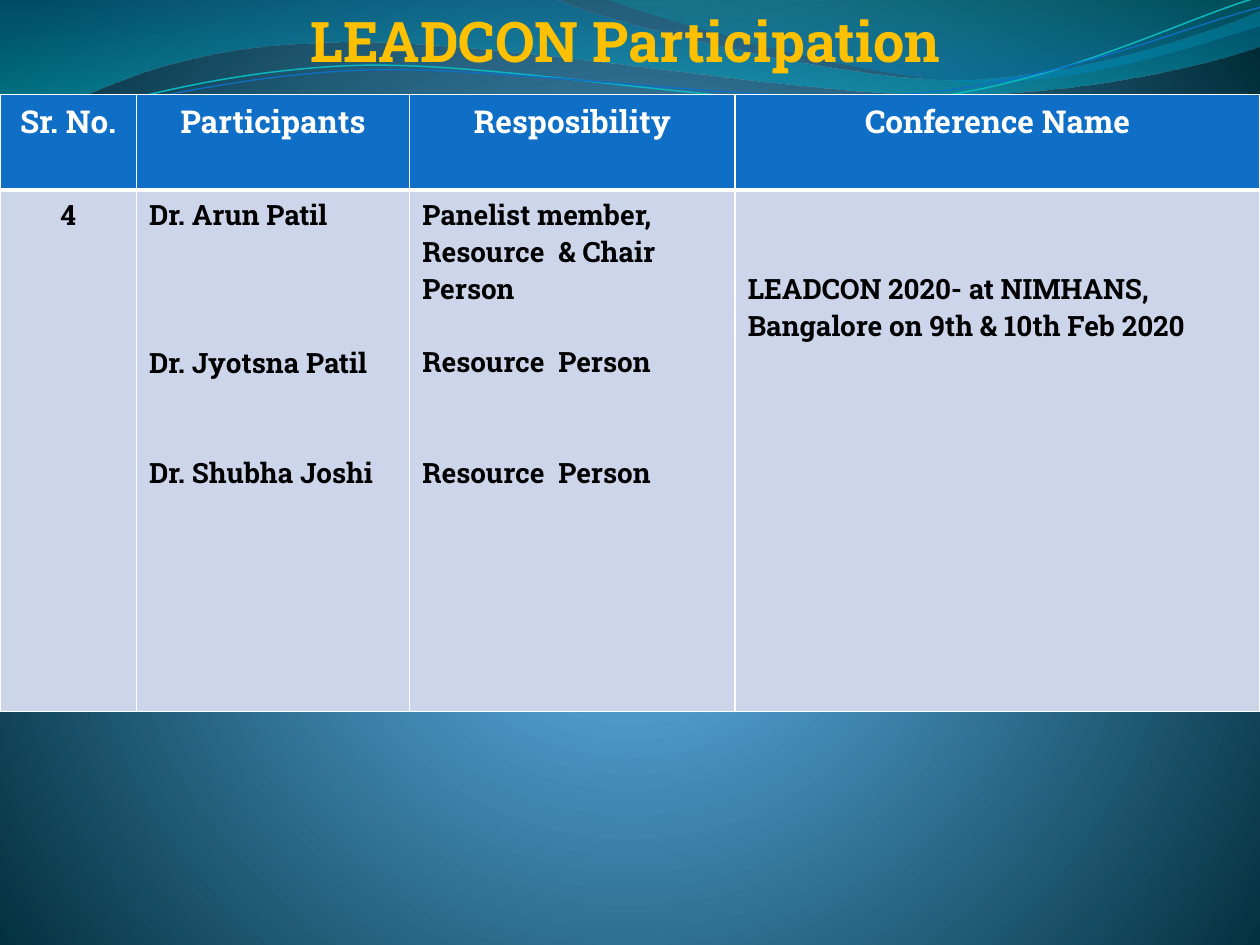
from pptx import Presentation
from pptx.dml.color import RGBColor
from pptx.enum.text import PP_ALIGN as Align
from pptx.oxml import parse_xml
from pptx.oxml.ns import nsdecls, qn
from pptx.util import Cm, Pt

FONT = "Roboto Slab"
COLORS = {
    "glow": "4AA0D6", "sky": "4C98C7", "deep": "002C38",
    "ocean": "0074A1", "aqua": "00C6CF", "teal": "00A1A9", "azure": "008BBF",
    "aqua_line": "0AB8BF", "blue": "0F6FC6", "gold": "FFC000",
    "body": "CCD5EA", "white": "FFFFFF", "black": "000000",
}
WIDTH, HEIGHT = 25.4, 19.05
BLANK_LINE = 21.1  # points, one line of 16 pt text

# Waves in cm: a start point, then curves (three points) and lines (one point)
UPPER_BAND = [(0, 0), [(11.18, -0.03)],
              [(12.09, 0.43), (16.87, 1.6), (19.25, 1.6)],
              [(21.67, 1.6), (24.33, 0.66), (25.4, 0.23)], [(25.43, 0.91)],
              [(24.97, 1.12), (22.1, 1.93), (18.95, 1.91)],
              [(15.8, 1.91), (9.7, 0.71), (6.53, 0.86)],
              [(3.28, 0.91), (1.17, 2.11), (-0.03, 2.87)], [(0, 0)]]
RIGHT_BAND = [(12.17, -0.03),
              [(12.93, 0.28), (17.32, 1.57), (19.53, 1.65)],
              [(21.74, 1.75), (24.41, 0.81), (25.4, 0.53)],
              [(25.4, 0)], [(12.17, -0.03)]]
AQUA_WAVE = [(-0.05, 2.22),
             [(1.19, 1.82), (4.02, 1.04), (7.05, 1.06)],
             [(10.05, 1.07), (15.02, 2.37), (18.08, 2.29)],
             [(21.13, 2.2), (23.86, 0.91), (25.4, 0.55)]]
BLUE_WAVE = [(-0.04, 2.04),
             [(1.16, 1.9), (4.17, 1.15), (7.2, 1.16)],
             [(10.25, 1.18), (15.13, 2.25), (18.19, 2.16)],
             [(21.21, 2.1), (23.93, 1.06), (25.45, 0.75)]]
WAVE_TILT = -2.7

# Each column: width in cm, heading, and entries with the blank lines above them
COLUMNS = [
    (2.75, "Sr. No.", [("4", 0)]),
    (5.51, "Participants",
     [("Dr. Arun Patil", 0), ("Dr. Jyotsna Patil", 3), ("Dr. Shubha Joshi", 2)]),
    (6.56, "Resposibility",
     [("Panelist member,", 0), ("Resource  & Chair Person", 0),
      ("Resource  Person", 1), ("Resource  Person", 2)]),
    (10.58, "Conference Name",
     [("LEADCON 2020- at NIMHANS, Bangalore on 9th & 10th Feb 2020", 2)]),
]


def rgb(name):
    return RGBColor.from_string(COLORS[name])


def set_gradient(fill, owner, stops, direction):
    """Give a fill its stops (percent, colour, opacity) and direction."""
    fill.gradient()
    old = next(owner.iter(qn("a:gradFill")))
    stop_xml = "".join(
        f'<a:gs pos="{pos * 1000}"><a:srgbClr val="{COLORS[name]}">'
        f'<a:alpha val="{alpha * 1000}"/></a:srgbClr></a:gs>'
        for pos, name, alpha in stops)
    old.getparent().replace(old, parse_xml(
        f'<a:gradFill {nsdecls("a")} rotWithShape="1">'
        f"<a:gsLst>{stop_xml}</a:gsLst>{direction}</a:gradFill>"))


def add_wave(slide, left, top, outline, closed):
    """Draw an outline, turning each run of three points into a Bézier curve."""
    def place(point):
        return Cm(left + point[0]), Cm(top + point[1])

    start, *segments = outline
    builder = slide.shapes.build_freeform(*place(start))
    builder.add_line_segments(
        [place(point) for segment in segments for point in segment], close=closed)
    wave = builder.convert_to_shape()
    wave.shadow.inherit = False
    steps = iter(list(wave.element.iter(qn("a:lnTo"))))
    for segment in segments:
        lines = [next(steps) for _ in segment]
        if len(lines) == 3:
            curve = parse_xml(f'<a:cubicBezTo {nsdecls("a")}/>')
            lines[0].addprevious(curve)
            for line in lines:
                curve.append(line[0])
                line.getparent().remove(line)
    return wave


def add_backdrop(slide, left, top):
    set_gradient(slide.background.fill, slide.element,
                 [(0, "glow", 100), (25, "sky", 100), (100, "deep", 100)],
                 '<a:path path="circle"><a:fillToRect l="10000" t="110000" '
                 'r="10000" b="100000"/></a:path>')
    # Translucent bands
    for outline, stops in [
            (UPPER_BAND, [(0, "ocean", 45), (100, "aqua", 55)]),
            (RIGHT_BAND, [(0, "teal", 30), (80, "azure", 45)])]:
        band = add_wave(slide, left, top, outline, True)
        set_gradient(band.fill, band.element, stops,
                     '<a:lin ang="5400000" scaled="1"/>')
        band.line.fill.background()
    # Thin wave lines
    for outline, color, weight in [(AQUA_WAVE, "aqua_line", 0.85),
                                   (BLUE_WAVE, "blue", 0.75)]:
        wave = add_wave(slide, left, top, outline, False)
        wave.rotation = WAVE_TILT
        wave.fill.background()
        wave.line.color.rgb = rgb(color)
        wave.line.width = Pt(weight)


def add_run(paragraph, text, size, color):
    run = paragraph.add_run()
    run.text = text
    run.font.name, run.font.size, run.font.bold = FONT, Pt(size), True
    run.font.color.rgb = rgb(color)


def add_title(slide, left, top, width, height):
    frame = slide.shapes.add_textbox(
        Cm(left), Cm(top), Cm(width), Cm(height)).text_frame
    frame.word_wrap = True
    frame.margin_left, frame.margin_right = Cm(0), Cm(0.17)
    heading = frame.paragraphs[0]
    heading.alignment = Align.CENTER
    add_run(heading, "LEADCON Participation", 32, "gold")


def style_cell(cell, color, top_weight, bottom_weight):
    cell.fill.solid()
    cell.fill.fore_color.rgb = rgb(color)
    edges = [("L", 1), ("R", 1), ("T", top_weight), ("B", bottom_weight)]
    properties = cell._tc.get_or_add_tcPr()
    for position, (side, weight) in enumerate(edges):
        properties.insert(position, parse_xml(
            f'<a:ln{side} {nsdecls("a")} w="{Pt(weight)}"><a:solidFill>'
            f'<a:srgbClr val="{COLORS["white"]}"/></a:solidFill></a:ln{side}>'))


def add_participation_table(slide, left, top, width, header_height, body_height):
    table = slide.shapes.add_table(
        2, len(COLUMNS), Cm(left), Cm(top), Cm(width),
        Cm(header_height + body_height)).table
    table.rows[0].height, table.rows[1].height = Cm(header_height), Cm(body_height)
    for index, (column_width, heading, entries) in enumerate(COLUMNS):
        table.columns[index].width = Cm(column_width)
        # Heading
        header = table.cell(0, index)
        style_cell(header, "blue", 1, 3)
        title = header.text_frame.paragraphs[0]
        title.alignment = Align.CENTER
        add_run(title, heading, 18, "white")
        # Entries
        body = table.cell(1, index)
        style_cell(body, "body", 3, 1)
        body.margin_top = Cm(0.13) + Pt(BLANK_LINE * entries[0][1])
        for number, (text, blanks) in enumerate(entries):
            frame = body.text_frame
            entry = frame.add_paragraph() if number else frame.paragraphs[0]
            entry.alignment = Align.LEFT if index else Align.CENTER
            if number:
                entry.space_before = Pt(BLANK_LINE * blanks)
            add_run(entry, text, 16, "black")


def main():
    deck = Presentation()
    deck.slide_width, deck.slide_height = Cm(WIDTH), Cm(HEIGHT)
    slide = deck.slides.add_slide(deck.slide_layouts[6])
    add_backdrop(slide, 0, 0)
    add_title(slide, 0, 0, WIDTH, HEIGHT)
    add_participation_table(slide, 0, 1.9, WIDTH, 1.93, 10.51)
    deck.save("out.pptx")


if __name__ == "__main__":
    main()
